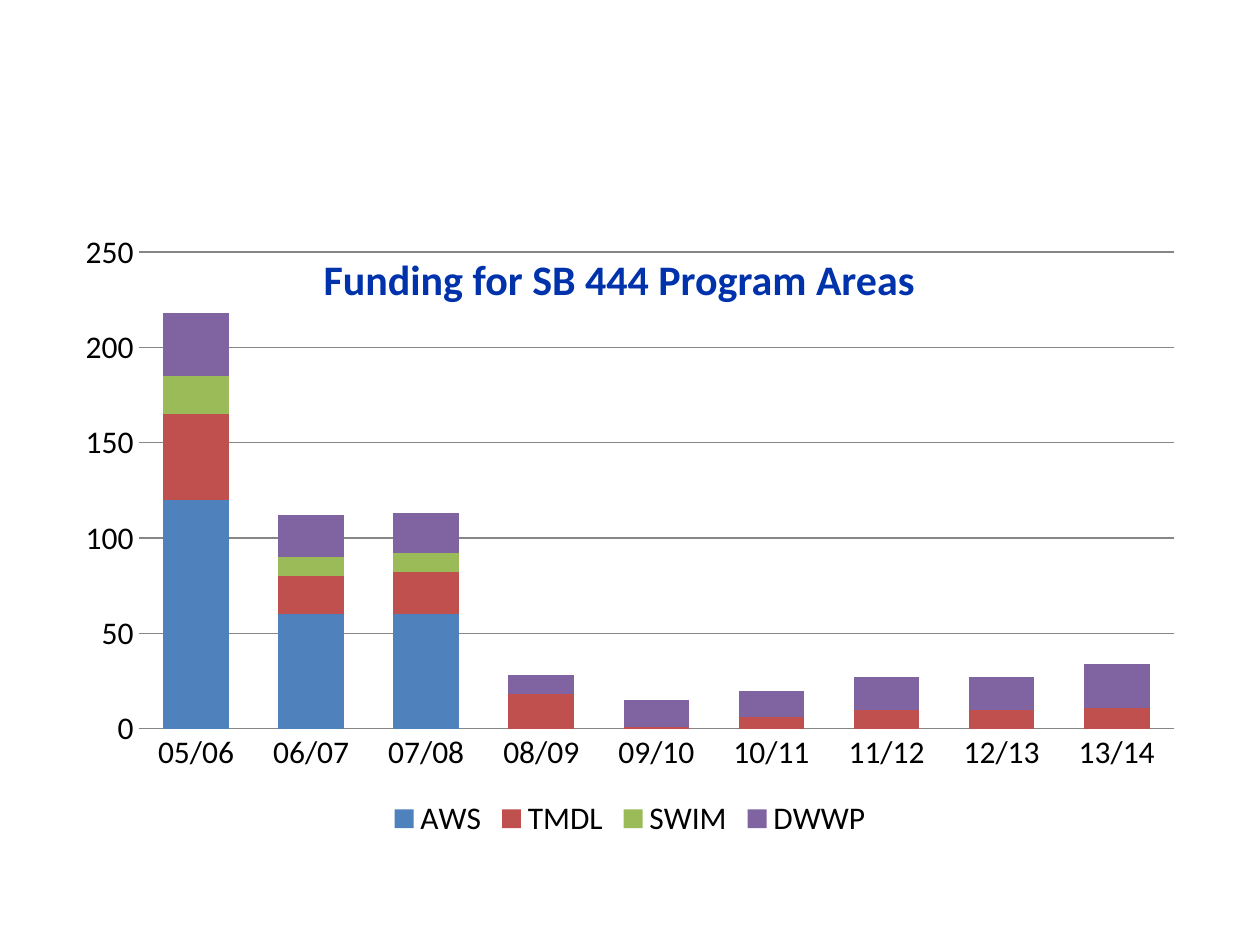
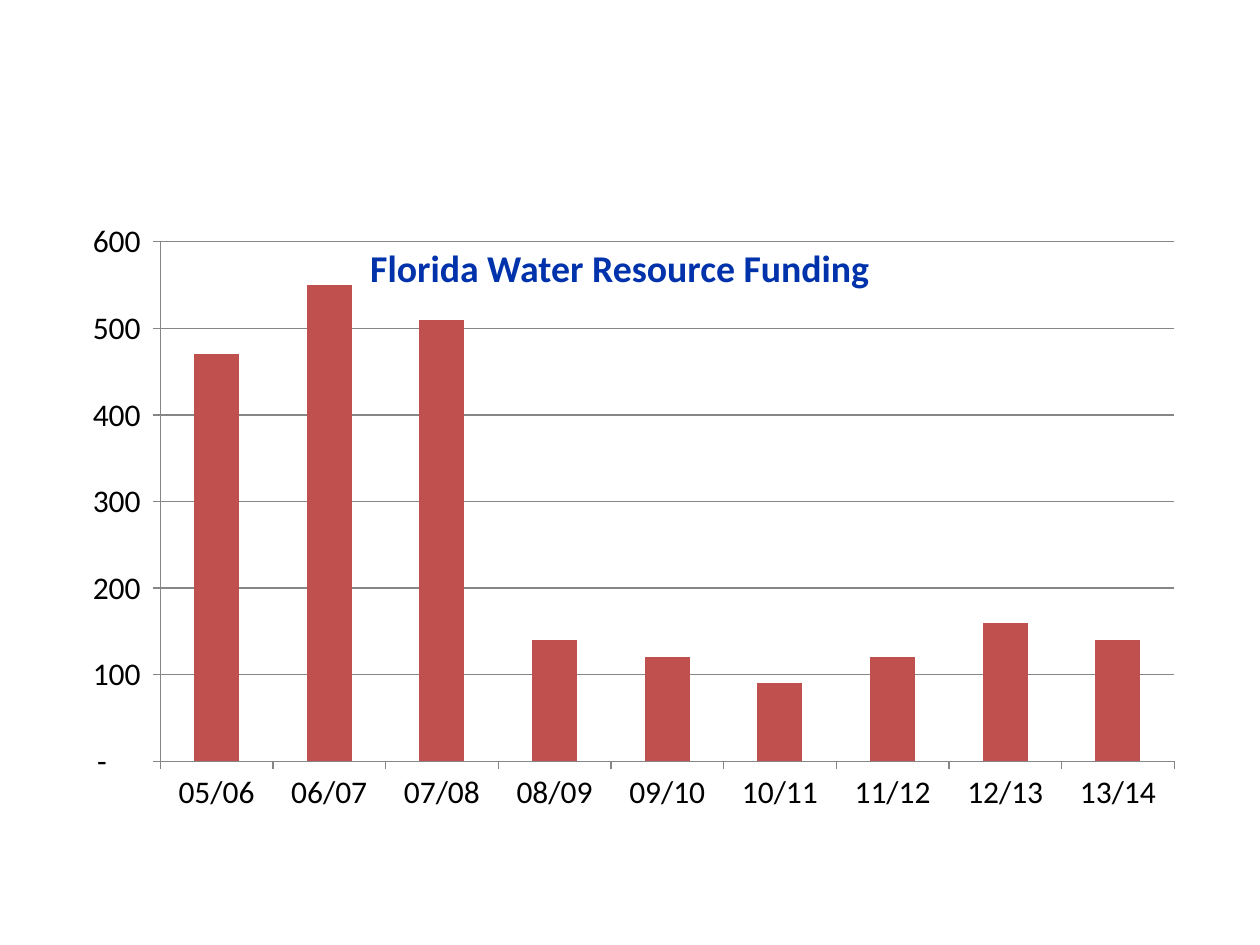
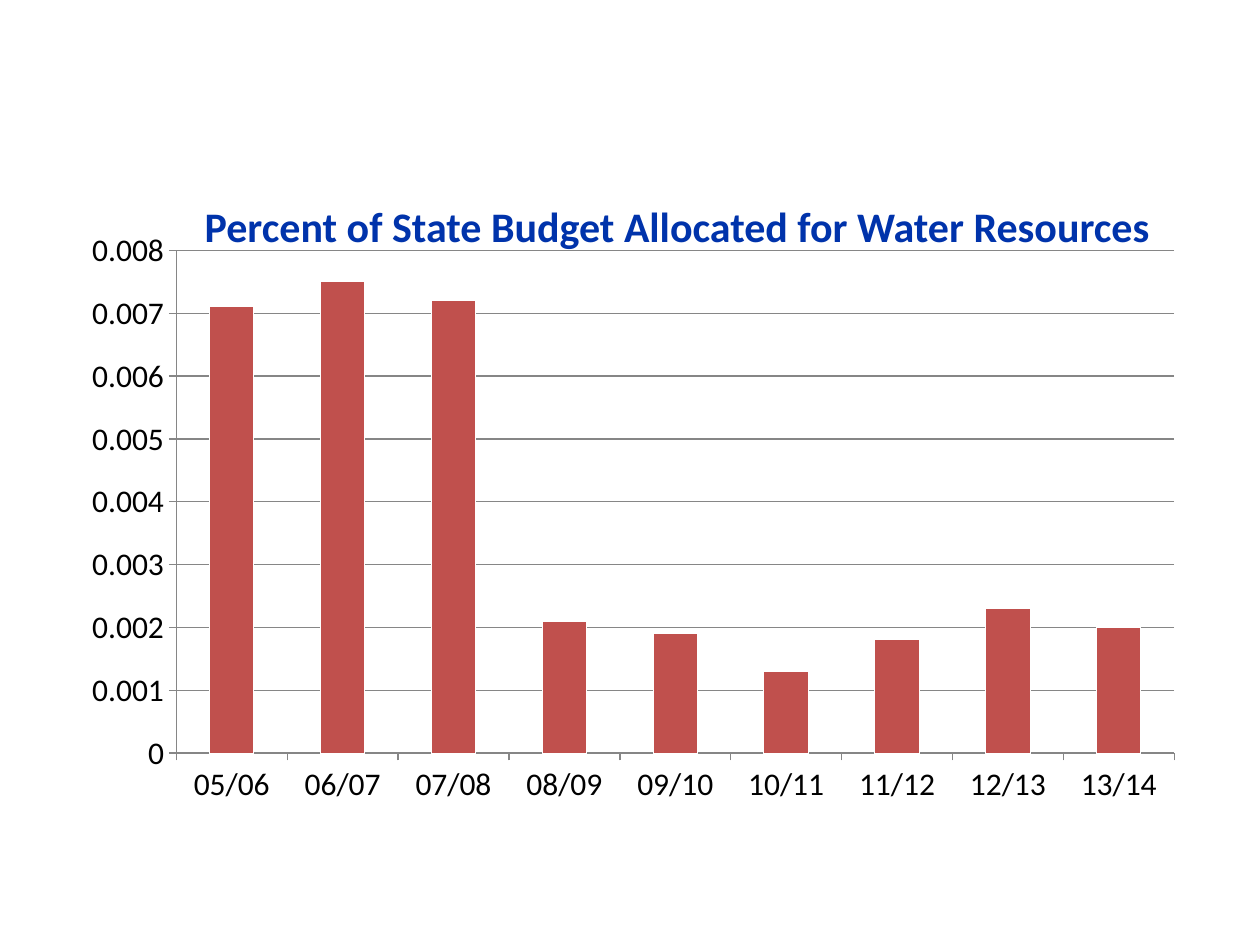
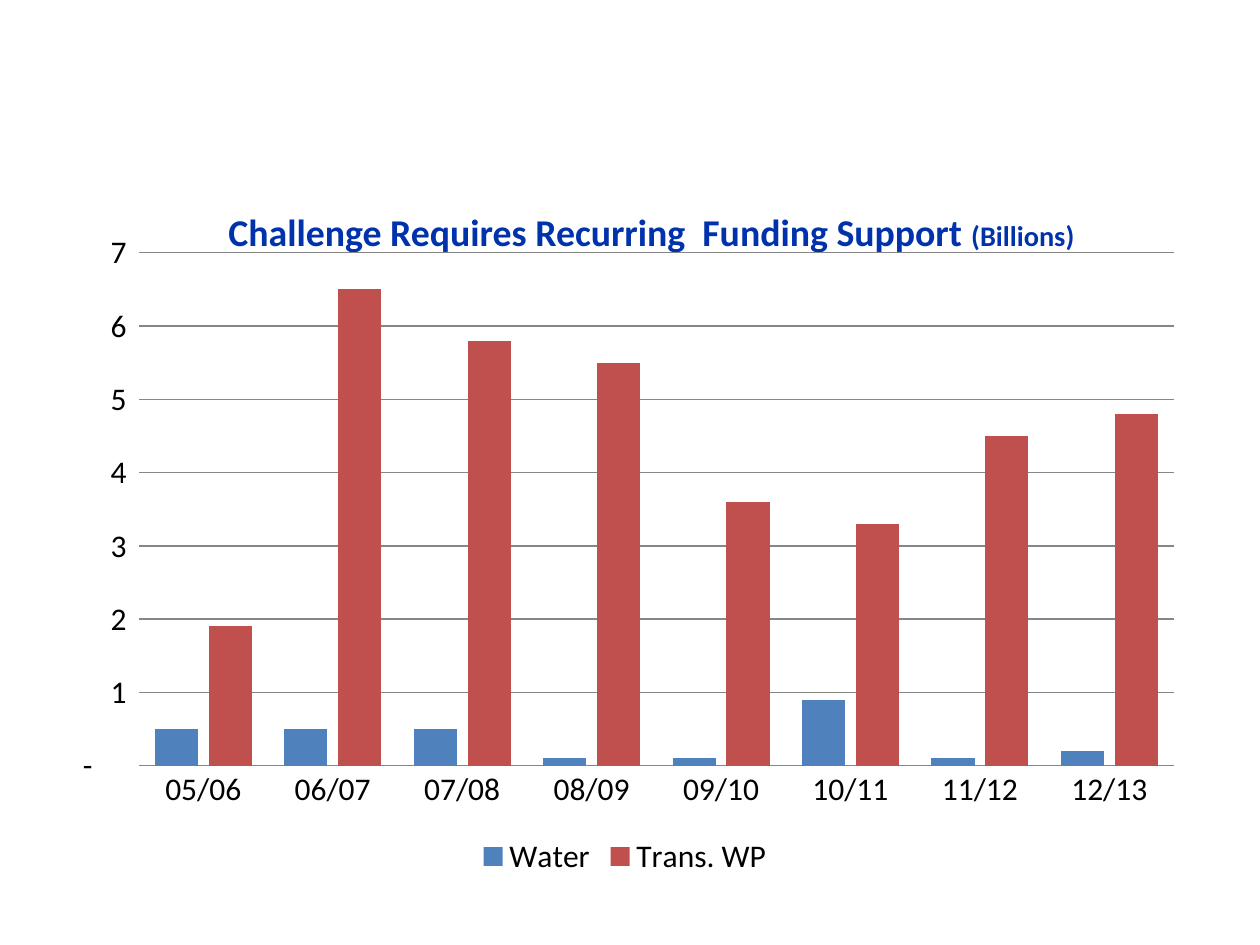
from dataclasses import dataclass

from lxml.etree import SubElement
from pptx import Presentation
from pptx.chart.chart import Chart
from pptx.chart.data import CategoryChartData as ChartData
from pptx.dml.color import RGBColor
from pptx.enum.chart import XL_CHART_TYPE as Kind
from pptx.enum.chart import XL_LEGEND_POSITION as Spot
from pptx.enum.chart import XL_TICK_MARK as Tick
from pptx.enum.text import MSO_ANCHOR, MSO_AUTO_SIZE, PP_ALIGN
from pptx.oxml import parse_xml
from pptx.oxml.ns import nsdecls, qn
from pptx.util import Inches, Pt

FONT = "Calibri"
HEX = {
    "title": "0033AB", "text": "000000", "grid": "868686", "white": "FFFFFF",
    "blue": "4F81BD", "red": "C0504D", "green": "9BBB59", "purple": "8064A2",
}
YEARS = [f"{y:02}/{y + 1:02}" for y in range(5, 14)]
DASH = r'_(* #,##0_);_(* \(#,##0\);_(* "-"??_);_(@_)'

Box = tuple[float, float, float, float]


@dataclass
class Series:
    name: str
    color: str
    vals: list[float]


@dataclass
class Page:
    runs: list[tuple[str, float]]
    title: Box
    chart: Box
    series: list[Series]
    top: float
    step: float
    kind: Kind = Kind.COLUMN_CLUSTERED
    gap: int = 150
    overlap: int = 0
    form: str = "General"
    plain: bool = False  # no ticks and no value line, but a legend
    edge: bool = False  # white outline round the bars
    plot: Box | None = None


PAGES = [
    Page([("Funding for SB 444 Program Areas", 24)],
         (2.08, 1.92, 5.67, 0.58), (0.5, 1.75, 9, 4.95),
         [Series("AWS", "blue", [120, 60, 60, 0, 0, 0, 0, 0, 0]),
          Series("TMDL", "red", [45, 20, 22, 18, 1, 6, 10, 10, 11]),
          Series("SWIM", "green", [20, 10, 10, 0, 0, 0, 0, 0, 0]),
          Series("DWWP", "purple", [33, 22, 21, 10, 14, 14, 17, 17, 23])],
         250, 50, kind=Kind.COLUMN_STACKED, gap=75, overlap=100, plain=True),
    Page([("Florida Water Resource Funding", 21.6)],
         (2.67, 1.83, 4.5, 0.58), (0.5, 1.67, 9, 4.87),
         [Series("Series 1", "red",
                 [470, 550, 510, 140, 120, 90, 120, 160, 140])],
         600, 100, form=DASH),
    Page([("Percent of State Budget Allocated for Water Resources", 24)],
         (1.25, 1.42, 8.25, 0.75), (0.5, 1.75, 9, 4.75),
         [Series("Series 1", "red", [0.0071, 0.0075, 0.0072, 0.0021, 0.0019,
                                     0.0013, 0.0018, 0.0023, 0.002])],
         0.008, 0.001, edge=True, plot=(0.1, 0.05, 0.88, 0.84)),
    Page([("Challenge Requires Recurring  Funding Support ", 21.6),
          ("(Billions)", 16.2)],
         (1.42, 1.67, 7.5, 0.33), (0.42, 1.75, 9.08, 5.25),
         [Series("Water", "blue", [0.5, 0.5, 0.5, 0.1, 0.1, 0.9, 0.1, 0.2]),
          Series("Trans. WP", "red",
                 [1.9, 6.5, 5.8, 5.5, 3.6, 3.3, 4.5, 4.8])],
         7, 1, gap=75, overlap=-25, form=DASH, plain=True),
]


def tint(key: str) -> RGBColor:
    return RGBColor.from_string(HEX[key])


def style(font, *, size: float, color: str, bold: bool = False) -> None:
    font.name, font.size, font.bold = FONT, Pt(size), bold
    font.color.rgb = tint(color)


def write(para, text: str, **form) -> None:
    """Add a run of text; the keywords are those of style."""
    run = para.add_run()
    run.text = text
    style(run.font, **form)


def set_title(shape, page: Page) -> None:
    shape.left, shape.top, shape.width, shape.height = map(Inches, page.title)
    frame = shape.text_frame
    frame.word_wrap = True
    frame.auto_size = MSO_AUTO_SIZE.NONE
    frame.vertical_anchor = MSO_ANCHOR.MIDDLE
    para = frame.paragraphs[0]
    para.alignment = PP_ALIGN.CENTER
    for text, size in page.runs:
        write(para, text, size=size, color="title", bold=True)


def draw_line(line) -> None:
    line.color.rgb = tint("grid")
    line.width = Pt(0.75)


def set_axes(chart: Chart, page: Page) -> None:
    cat, val = chart.category_axis, chart.value_axis
    for axis in (cat, val):
        axis.major_tick_mark = Tick.NONE if page.plain else Tick.OUTSIDE
        axis.minor_tick_mark = Tick.NONE
        draw_line(axis.format.line)
    if page.plain:
        val.format.line.fill.background()
    val.minimum_scale, val.maximum_scale = 0, page.top
    val.major_unit = page.step
    val.has_major_gridlines = True
    draw_line(val.major_gridlines.format.line)
    val.tick_labels.number_format = page.form
    val.tick_labels.number_format_is_linked = False


def set_bars(chart: Chart, page: Page) -> None:
    plot = chart.plots[0]
    plot.gap_width, plot.overlap = page.gap, page.overlap
    plot.vary_by_categories = False
    for bars, item in zip(plot.series, page.series):
        bars.invert_if_negative = False
        bars.format.fill.solid()
        bars.format.fill.fore_color.rgb = tint(item.color)
        if page.edge:
            bars.format.line.color.rgb = tint("white")


def clear_back(chart: Chart) -> None:
    """Make the chart see-through, so the title behind it shows."""
    def blank():
        return parse_xml(f"<c:spPr {nsdecls('c', 'a')}><a:noFill/>"
                         "<a:ln><a:noFill/></a:ln></c:spPr>")

    root = chart.element
    root.find(qn("c:chart")).addnext(blank())
    root.find(".//" + qn("c:plotArea")).append(blank())


def place_plot(chart: Chart, box: Box) -> None:
    """Fix the inner plot area, in parts of the chart's size."""
    area = chart.element.find(".//" + qn("c:plotArea"))
    old = area.find(qn("c:layout"))
    if old is not None:
        area.remove(old)
    lay = parse_xml(f"<c:layout {nsdecls('c')}/>")
    area.insert(0, lay)
    hand = SubElement(lay, qn("c:manualLayout"))
    pairs = [("layoutTarget", "inner"), ("xMode", "edge"), ("yMode", "edge")]
    for tag, val in pairs + list(zip("xywh", box)):
        SubElement(hand, qn(f"c:{tag}")).set("val", str(val))


def add_chart(slide, page: Page) -> None:
    data = ChartData()
    data.categories = YEARS[:len(page.series[0].vals)]
    for item in page.series:
        data.add_series(item.name, item.vals)
    frame = slide.shapes.add_chart(page.kind, *map(Inches, page.chart), data)
    chart = frame.chart
    style(chart.font, size=18, color="text")
    chart.has_title = False
    chart.has_legend = page.plain
    if page.plain:
        chart.legend.position = Spot.BOTTOM
        chart.legend.include_in_layout = False
    set_axes(chart, page)
    set_bars(chart, page)
    clear_back(chart)
    if page.plot:
        place_plot(chart, page.plot)


def main() -> None:
    deck = Presentation()
    deck.slide_width, deck.slide_height = Inches(10), Inches(7.5)
    for page in PAGES:
        slide = deck.slides.add_slide(deck.slide_layouts[5])
        set_title(slide.shapes.title, page)
        add_chart(slide, page)
    deck.save("out.pptx")


if __name__ == "__main__":
    main()
